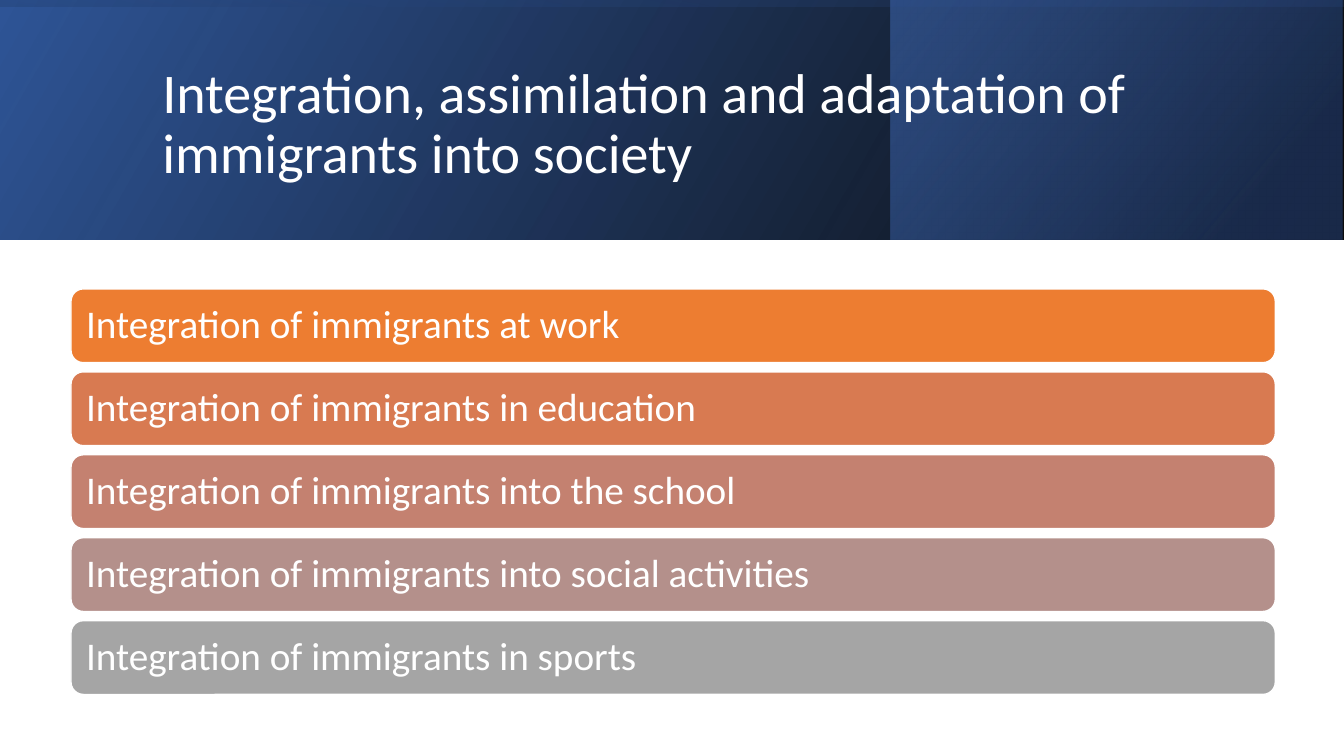
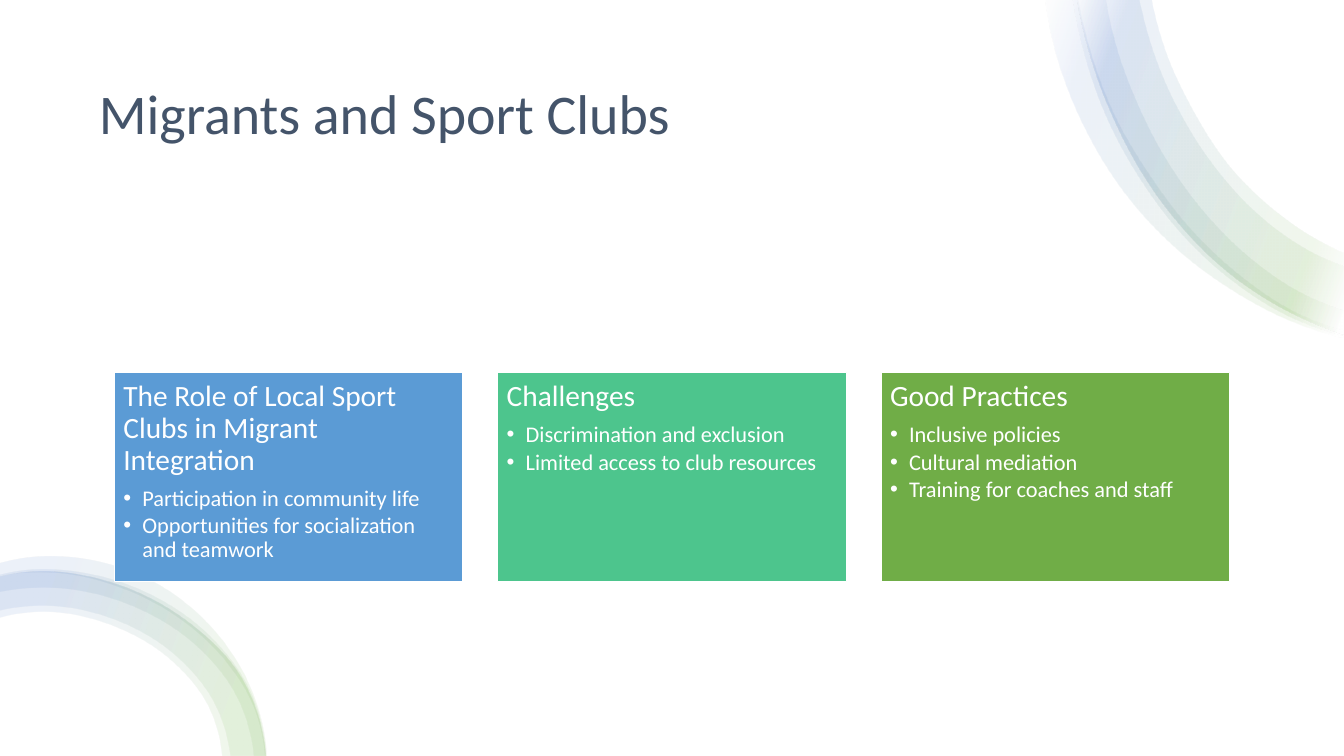
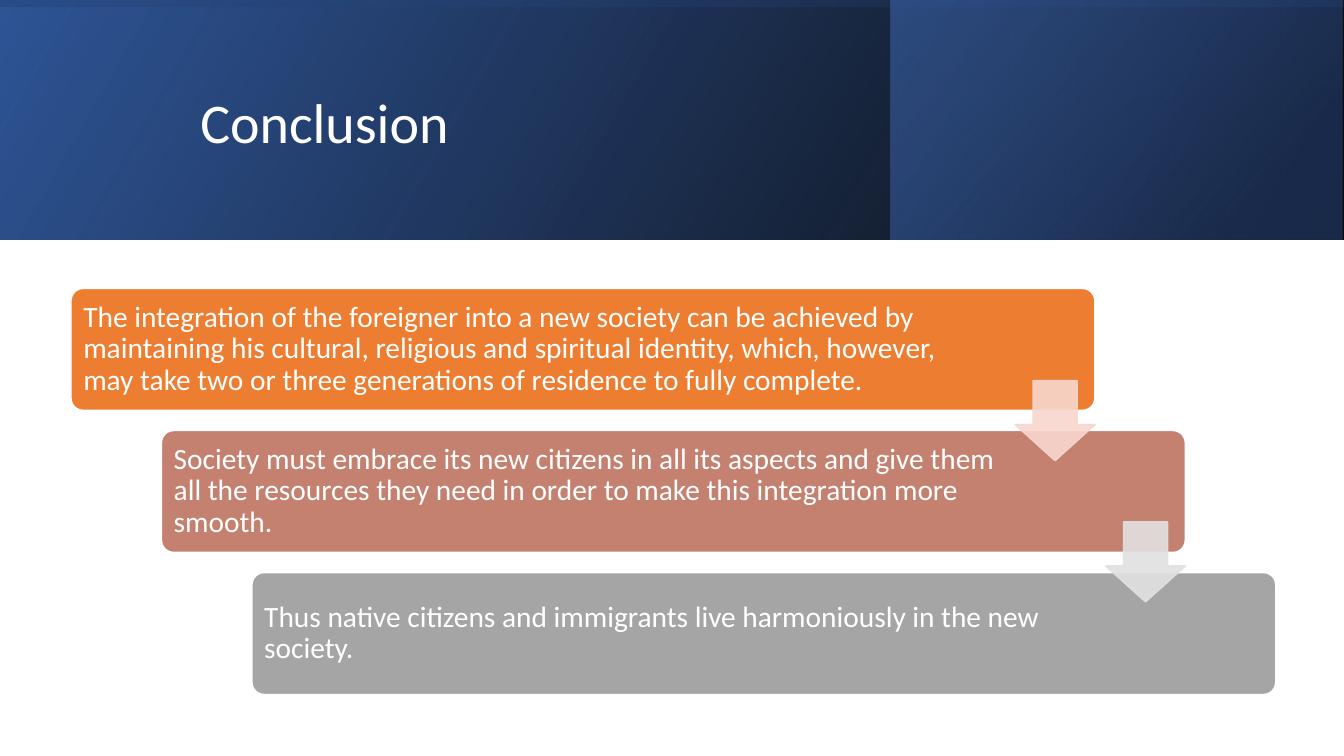
import math
import pptx
import pptx.util
import pptx.dml.color
import pptx.enum.shapes
import pptx.enum.text
import pptx.oxml
import pptx.oxml.ns
from pptx.util import Cm, Pt
from pptx.dml.color import RGBColor
from lxml import etree

# Shared look
FONT = "Calibri"
WHITE = RGBColor(0xFF, 0xFF, 0xFF)
BLACK = RGBColor(0x00, 0x00, 0x00)
SLATE = RGBColor(0x44, 0x54, 0x6A)
NAVY = RGBColor(0x20, 0x38, 0x64)
DEEP_BLUE = RGBColor(0x2F, 0x55, 0x97)
BLUE = RGBColor(0x44, 0x72, 0xC4)
SKY = RGBColor(0x5B, 0x9B, 0xD5)
MINT = RGBColor(0x4D, 0xC5, 0x8D)
GREEN = RGBColor(0x70, 0xAD, 0x47)
ORANGE = RGBColor(0xED, 0x7D, 0x31)
RUST = RGBColor(0xD8, 0x7A, 0x51)
ROSE = RGBColor(0xC4, 0x81, 0x70)
TAUPE = RGBColor(0xB4, 0x90, 0x8B)
GREY = RGBColor(0xA5, 0xA5, 0xA5)
PALE_ROSE = RGBColor(0xF8, 0xD7, 0xCE)
PALE_GREY = RGBColor(0xE1, 0xE1, 0xE1)

PAGE_WIDTH, PAGE_HEIGHT = 33.87, 19.05
BAND_HEIGHT = 6.04
SHAPES = pptx.enum.shapes.MSO_SHAPE
MIDDLE = pptx.enum.text.MSO_ANCHOR.MIDDLE
TOP = pptx.enum.text.MSO_ANCHOR.TOP
LEFT = pptx.enum.text.PP_ALIGN.LEFT
qn = pptx.oxml.ns.qn

# Slide content
BARS = [
    ("Integration of immigrants at work", ORANGE),
    ("Integration of immigrants in education", RUST),
    ("Integration of immigrants into the school", ROSE),
    ("Integration of immigrants into social activities", TAUPE),
    ("Integration of immigrants in sports", GREY),
]
CARDS = [
    ("The Role of Local Sport Clubs in Migrant Integration", SKY,
     ["Participation in community life",
      "Opportunities for socialization and teamwork"]),
    ("Challenges", MINT,
     ["Discrimination and exclusion", "Limited access to club resources"]),
    ("Good Practices", GREEN,
     ["Inclusive policies", "Cultural mediation",
      "Training for coaches and staff"]),
]
# Text, fill, right margin
STEPS = [
    ("The integration of the foreigner into a new society can be achieved by "
     "maintaining his cultural, religious and spiritual identity, which, "
     "however, may take two or three generations of residence to fully "
     "complete.", ORANGE, 3.35),
    ("Society must embrace its new citizens in all its aspects and give them "
     "all the resources they need in order to make this integration more "
     "smooth.", ROSE, 4.5),
    ("Thus native citizens and immigrants live harmoniously in the new "
     "society.", GREY, 4.5),
]

# Swooshes: outer and inner edge of each ribbon, in CURVE_UNIT steps
CURVE_UNIT = Cm(0.0254)
TOP_EDGE = [(1333, 332), (1223, 274), (1152, 200), (1100, 107), (1067, -9)]
LOW_EDGE = [(263, 750), (237, 669), (185, 616), (117, 580), (40, 567),
            (0, 572)]
TOP_RIBBONS = [
    ([(1333, 335), (1282, 319), (1221, 287), (1165, 245), (1116, 192),
      (1078, 131), (1041, 26), (1036, -9)],
     [(1068, -9), (1082, 52), (1106, 115), (1140, 173), (1181, 227),
      (1230, 273), (1286, 310), (1333, 328)]),
    (TOP_EDGE,
     [(1141, -9), (1158, 55), (1185, 112), (1219, 164), (1261, 206),
      (1307, 238), (1333, 251)]),
    ([(1333, 333), (1279, 314), (1223, 279), (1173, 233), (1132, 179),
      (1099, 119), (1068, 20), (1063, -9)],
     [(1096, -9), (1107, 44), (1129, 104), (1158, 160), (1195, 211),
      (1239, 255), (1290, 290), (1333, 308)]),
    (TOP_EDGE,
     [(1129, -9), (1147, 59), (1174, 118), (1210, 172), (1253, 217),
      (1301, 250), (1333, 264)]),
]
LOW_RIBBONS = [
    (LOW_EDGE,
     [(0, 613), (40, 607), (107, 619), (166, 652), (206, 700), (220, 750)]),
    (LOW_EDGE,
     [(0, 606), (40, 601), (109, 613), (170, 647), (212, 697), (228, 750)]),
    ([(263, 750), (247, 685), (203, 627), (142, 587), (69, 567), (31, 566),
      (0, 571)],
     [(0, 588), (33, 584), (67, 585), (134, 603), (192, 639), (234, 691),
      (251, 750)]),
    ([(264, 750), (250, 687), (210, 623), (148, 575), (71, 553), (31, 553),
      (0, 559)],
     [(0, 572), (32, 568), (69, 570), (122, 584), (171, 609), (225, 658),
      (251, 701), (262, 750)]),
]
LOW_STOPS = [(16, GREEN, 10), (85, BLUE, 10)]
TOP_STOPS = [(2, WHITE, 10), *LOW_STOPS, (100, WHITE, 10)]


# Fills
def set_gradient(shape, stops, angle):
    """Fill with (position %, colour, opacity %) stops along an angle."""
    shape.fill.background()
    shape.line.fill.background()
    shape.shadow.inherit = False
    gradient = etree.Element(qn("a:gradFill"), rotWithShape="1")
    stop_list = etree.SubElement(gradient, qn("a:gsLst"))
    for position, colour, opacity in stops:
        stop = etree.SubElement(stop_list, qn("a:gs"), pos=str(position * 1000))
        tint = etree.SubElement(stop, qn("a:srgbClr"), val=str(colour))
        etree.SubElement(tint, qn("a:alpha"), val=str(opacity * 1000))
    etree.SubElement(gradient, qn("a:lin"), ang=str(angle * 60000), scaled="0")
    properties = shape.element.spPr
    properties.replace(properties.find(qn("a:noFill")), gradient)


def set_opacity(shape, opacity):
    for tint in shape.element.spPr.iter(qn("a:srgbClr")):
        etree.SubElement(tint, qn("a:alpha"), val=str(opacity * 1000))


# Text
def style_paragraph(para, size, colour, space_after=0):
    para.alignment = LEFT
    para.line_spacing = 0.9
    para.space_after = Pt(space_after)
    para.font.name = FONT
    para.font.size = Pt(size)
    para.font.color.rgb = colour


def add_bullet(para):
    para.level = 1
    properties = para._p.get_or_add_pPr()
    properties.set("marL", str(Cm(0.48)))
    properties.set("indent", str(-Cm(0.48)))
    etree.SubElement(properties, qn("a:buFont"), typeface="Arial")
    etree.SubElement(properties, qn("a:buChar"), char="•")


def set_margins(frame, left, top, right, bottom):
    frame.margin_left, frame.margin_top = Cm(left), Cm(top)
    frame.margin_right, frame.margin_bottom = Cm(right), Cm(bottom)
    frame.word_wrap = True


def set_title(page, text, box, colour, inset=0.25):
    title = page.shapes.title
    title.left, title.top, title.width, title.height = map(Cm, box)
    frame = title.text_frame
    frame.text = text
    frame.vertical_anchor = MIDDLE
    set_margins(frame, inset, 0.13, 0.25, 0.13)
    style_paragraph(frame.paragraphs[0], 40, colour)


# Shapes
def add_block(page, kind, box, colour, line_colour=WHITE):
    block = page.shapes.add_shape(kind, *map(Cm, box))
    block.shadow.inherit = False
    block.fill.solid()
    block.fill.fore_color.rgb = colour
    block.line.color.rgb = line_colour
    block.line.width = Pt(1)
    return block


def add_text_block(page, kind, box, colour, text, size, margins,
                   anchor=MIDDLE, space_after=0):
    block = add_block(page, kind, box, colour)
    frame = block.text_frame
    frame.text = text
    frame.vertical_anchor = anchor
    set_margins(frame, *margins)
    style_paragraph(frame.paragraphs[0], size, WHITE, space_after)
    return block


def add_band(page, box, stops, angle, rotation=0):
    band = page.shapes.add_shape(SHAPES.RECTANGLE, *map(Cm, box))
    band.rotation = rotation
    band.element.spPr.xfrm.set("flipH", "1")
    set_gradient(band, stops, angle)


# Curves
def find_tangents(points):
    """Return the direction of a smooth curve at each of its points."""
    lengths = [math.dist(a, b) for a, b in zip(points, points[1:])]
    slopes = [[(q - p) / length for p, q in zip(a, b)]
              for a, b, length in zip(points, points[1:], lengths)]
    inner = [[(u * after + v * before) / (before + after)
              for u, v in zip(first, second)]
             for first, second, before, after
             in zip(slopes, slopes[1:], lengths, lengths[1:])]
    start = [2 * u - v for u, v in zip(slopes[0], inner[0])]
    end = [2 * u - v for u, v in zip(slopes[-1], inner[-1])]
    return [start, *inner, end]


def bend_edge(points, lines):
    """Turn the straight segments between the points into Bézier curves."""
    tangents = find_tangents(points)
    for i, line in enumerate(lines):
        third = math.dist(points[i], points[i + 1]) / 3
        controls = [
            [p + m * third for p, m in zip(points[i], tangents[i])],
            [p - m * third for p, m in zip(points[i + 1], tangents[i + 1])],
            points[i + 1]]
        curve = etree.Element(qn("a:cubicBezTo"))
        for x, y in controls:
            etree.SubElement(curve, qn("a:pt"), x=str(round(x)), y=str(round(y)))
        line.getparent().replace(line, curve)


def add_ribbon(page, outer, inner, stops):
    outline = [(x * CURVE_UNIT, y * CURVE_UNIT) for x, y in outer + inner]
    builder = page.shapes.build_freeform(*outline[0])
    builder.add_line_segments(outline[1:], close=True)
    ribbon = builder.convert_to_shape()
    local = [(x - ribbon.left, y - ribbon.top) for x, y in outline]
    lines = list(ribbon.element.spPr.iter(qn("a:lnTo")))
    turn = len(outer)
    bend_edge(local[:turn], lines[:turn - 1])
    bend_edge(local[turn:], lines[turn:turn + len(inner) - 1])
    set_gradient(ribbon, stops, 200)


# Pages
def add_page(deck):
    return deck.slides.add_slide(deck.slide_layouts[5])


def raise_title(page):
    """Bring the title in front of the decoration."""
    page.shapes.title.element.getparent().append(page.shapes.title.element)


def add_banner_page(deck, title, inset=0.25):
    page = add_page(deck)
    add_band(page, (0, 0, PAGE_WIDTH, BAND_HEIGHT),
             [(0, BLACK, 96), (100, DEEP_BLUE, 100)], 330)
    add_band(page, (22.45, 0, 11.38, BAND_HEIGHT),
             [(19, NAVY, 68), (100, BLUE, 48)], 320)
    offset = (PAGE_WIDTH - BAND_HEIGHT) / 2
    add_band(page, (offset, -offset, BAND_HEIGHT, PAGE_WIDTH),
             [(23, DEEP_BLUE, 16), (99, BLACK, 45)], 350, rotation=270)
    raise_title(page)
    set_title(page, title, (3.84, 0.97, 27, 4.37), WHITE, inset)
    return page


def add_integration_page(deck):
    page = add_banner_page(
        deck, "Integration, assimilation and adaptation of immigrants into society")
    for row, (text, colour) in enumerate(BARS):
        add_text_block(page, SHAPES.ROUNDED_RECTANGLE,
                       (1.79, 7.28 + row * 2.09, 30.35, 1.86), colour,
                       text, 28, (0.29, 0.1, 0.29, 0.1))


def add_clubs_page(deck):
    page = add_page(deck)
    backdrop = add_block(page, SHAPES.RECTANGLE,
                         (0, 0, PAGE_WIDTH, PAGE_HEIGHT), WHITE)
    backdrop.line.fill.background()
    raise_title(page)
    set_title(page, "Migrants and Sport Clubs", (2.24, 1.27, 29.39, 3.3), SLATE)
    for ribbons, stops in [(TOP_RIBBONS, TOP_STOPS), (LOW_RIBBONS, LOW_STOPS)]:
        for outer, inner in ribbons:
            add_ribbon(page, outer, inner, stops)
    for column, (heading, colour, items) in enumerate(CARDS):
        card = add_text_block(page, SHAPES.RECTANGLE,
                              (2.88 + column * 9.66, 9.38, 8.79, 5.28),
                              colour, heading, 21,
                              (0.23, 0.23, 0.23, 0.23), TOP, 7.5)
        for item in items:
            para = card.text_frame.add_paragraph()
            para.text = item
            style_paragraph(para, 16, WHITE, 2.2)
            add_bullet(para)


def add_conclusion_page(deck):
    page = add_banner_page(deck, "Conclusion", inset=1.21)
    for row, (text, colour, right_margin) in enumerate(STEPS):
        step = add_text_block(page, SHAPES.ROUNDED_RECTANGLE,
                              (1.79 + row * 2.28, 7.27 + row * 3.58, 25.8, 3.07),
                              colour, text, 21, (0.22, 0.2, right_margin, 0.2))
        step.adjustments[0] = 0.1
    for row, colour in enumerate([PALE_ROSE, PALE_GREY]):
        arrow = add_block(page, SHAPES.DOWN_ARROW,
                          (25.58 + row * 2.28, 9.59 + row * 3.56, 2.02, 2.02),
                          colour, colour)
        arrow.adjustments[0] = 0.55
        arrow.adjustments[1] = 0.45
        set_opacity(arrow, 90)


def main():
    deck = pptx.Presentation()
    deck.slide_width, deck.slide_height = Cm(PAGE_WIDTH), Cm(PAGE_HEIGHT)
    add_integration_page(deck)
    add_clubs_page(deck)
    add_conclusion_page(deck)
    deck.save("out.pptx")


if __name__ == "__main__":
    main()
